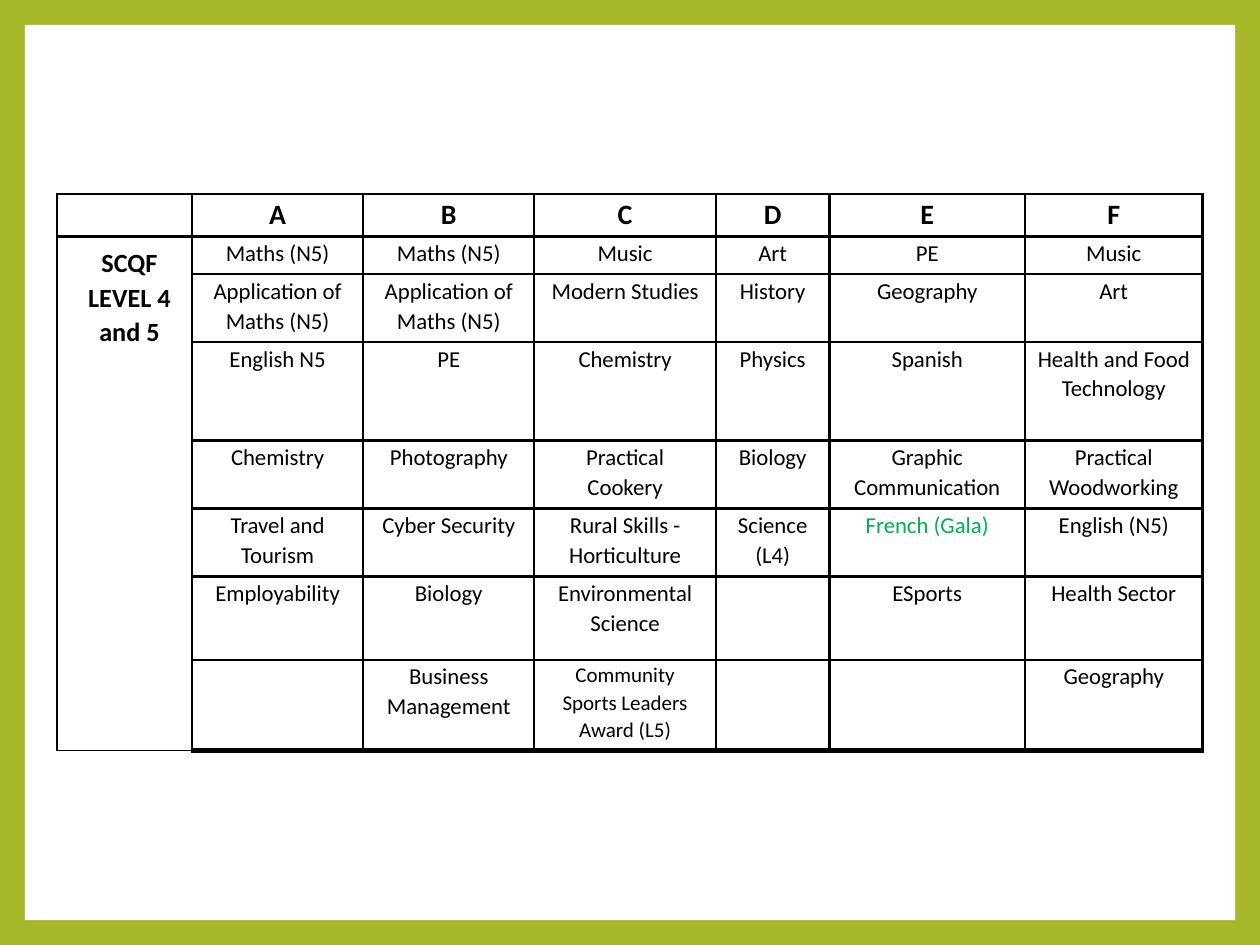
from pptx import Presentation
from pptx.dml.color import RGBColor as RGB
from pptx.enum.shapes import MSO_SHAPE as Shape
from pptx.enum.text import PP_ALIGN as Align
from pptx.oxml import parse_xml
from pptx.oxml.ns import nsdecls
from pptx.util import Cm, Pt

LIME = RGB(0xA6, 0xB7, 0x27)
WHITE = RGB(0xFF, 0xFF, 0xFF)
BLACK = RGB(0, 0, 0)
GREEN = RGB(0, 0xB0, 0x50)

WIDTHS = [2.72, 3.45, 3.45, 3.66, 2.29, 3.94, 3.58]
HEIGHTS = [0.86, 0.76, 1.37, 1.98, 1.37, 1.37, 1.68, 1.83]
LEVEL = "SCQF LEVEL 4 and 5"
ROWS = [
    ["", "A", "B", "C", "D", "E", "F"],
    [LEVEL, "Maths (N5)", "Maths (N5)", "Music", "Art", "PE", "Music"],
    ["", "Application of Maths (N5)", "Application of Maths (N5)",
     "Modern Studies", "History", "Geography", "Art"],
    ["", "English N5", "PE", "Chemistry", "Physics", "Spanish",
     "Health and Food Technology"],
    ["", "Chemistry", "Photography", "Practical Cookery", "Biology",
     "Graphic Communication", "Practical Woodworking"],
    ["", "Travel and Tourism", "Cyber Security", "Rural Skills - Horticulture",
     "Science (L4)", "French (Gala)", "English (N5)"],
    ["", "Employability", "Biology", "Environmental Science", "", "ESports",
     "Health Sector"],
    ["", "", "Business Management", "Community Sports Leaders Award (L5)", "",
     "", "Geography"],
]
SIZES = {LEVEL: 15, "Community Sports Leaders Award (L5)": 12}
COLORS = {"French (Gala)": GREEN}


def add_frame(slide, left, top, width, height):
    fill = slide.background.fill
    fill.solid()
    fill.fore_color.rgb = LIME
    panel = slide.shapes.add_shape(Shape.RECTANGLE, left, top, width, height)
    panel.shadow.inherit = False
    panel.fill.solid()
    panel.fill.fore_color.rgb = WHITE
    panel.line.fill.background()


def set_edges(cell, base):
    props = cell._tc.get_or_add_tcPr()
    for spot, (side, width) in enumerate(zip("LRTB", (1.5, 1.5, 1.5, base))):
        props.insert(spot, parse_xml(
            f'<a:ln{side} {nsdecls("a")} w="{Pt(width)}"><a:solidFill>'
            f'<a:srgbClr val="{BLACK}"/></a:solidFill></a:ln{side}>'))


def set_text(cell, text, head):
    cell.text = text
    para = cell.text_frame.paragraphs[0]
    para.alignment = Align.CENTER
    para.line_spacing = 1.07
    para.space_after = Pt(8)
    font = para.font
    font.name = "Calibri"
    font.size = Pt(SIZES.get(text, 16 if head else 13))
    font.bold = head
    font.color.rgb = COLORS.get(text, BLACK)


def set_pad(cell, side, top, base):
    cell.margin_left = cell.margin_right = Cm(side)
    cell.margin_top, cell.margin_bottom = Cm(top), Cm(base)


def add_grid(slide, left, top, width, height):
    last = len(ROWS) - 1
    table = slide.shapes.add_table(
        len(ROWS), len(WIDTHS), left, top, width, height).table
    table.first_row = table.horz_banding = False
    for col, size in zip(table.columns, WIDTHS):
        col.width = Cm(size)
    for row, size in zip(table.rows, HEIGHTS):
        row.height = Cm(size)
    for i, row in enumerate(ROWS):
        for j, text in enumerate(row):
            cell = table.cell(i, j)
            cell.fill.background()
            set_pad(cell, 0.25, 0.03, 0)
            set_text(cell, text, i == 0 or j == 0)
            if i and j == 0:
                set_edges(cell, 1)
            else:
                set_edges(cell, 3 if i == last else 1.5)
    level = table.cell(1, 0)
    level.merge(table.cell(last, 0))
    set_pad(level, 0.33, 0.18, 0.18)
    indent = level.text_frame.paragraphs[0]._p.get_or_add_pPr()
    indent.set("marL", str(Cm(0.2)))


def main():
    deck = Presentation()
    deck.slide_width, deck.slide_height = Cm(25.4), Cm(19.05)
    slide = deck.slides.add_slide(deck.slide_layouts[6])
    edge = Cm(0.5)
    add_frame(slide, edge, edge,
              deck.slide_width - 2 * edge, deck.slide_height - 2 * edge)
    add_grid(slide, Cm(1.15), Cm(3.91), Cm(sum(WIDTHS)), Cm(sum(HEIGHTS)))
    deck.save("out.pptx")


if __name__ == "__main__":
    main()
